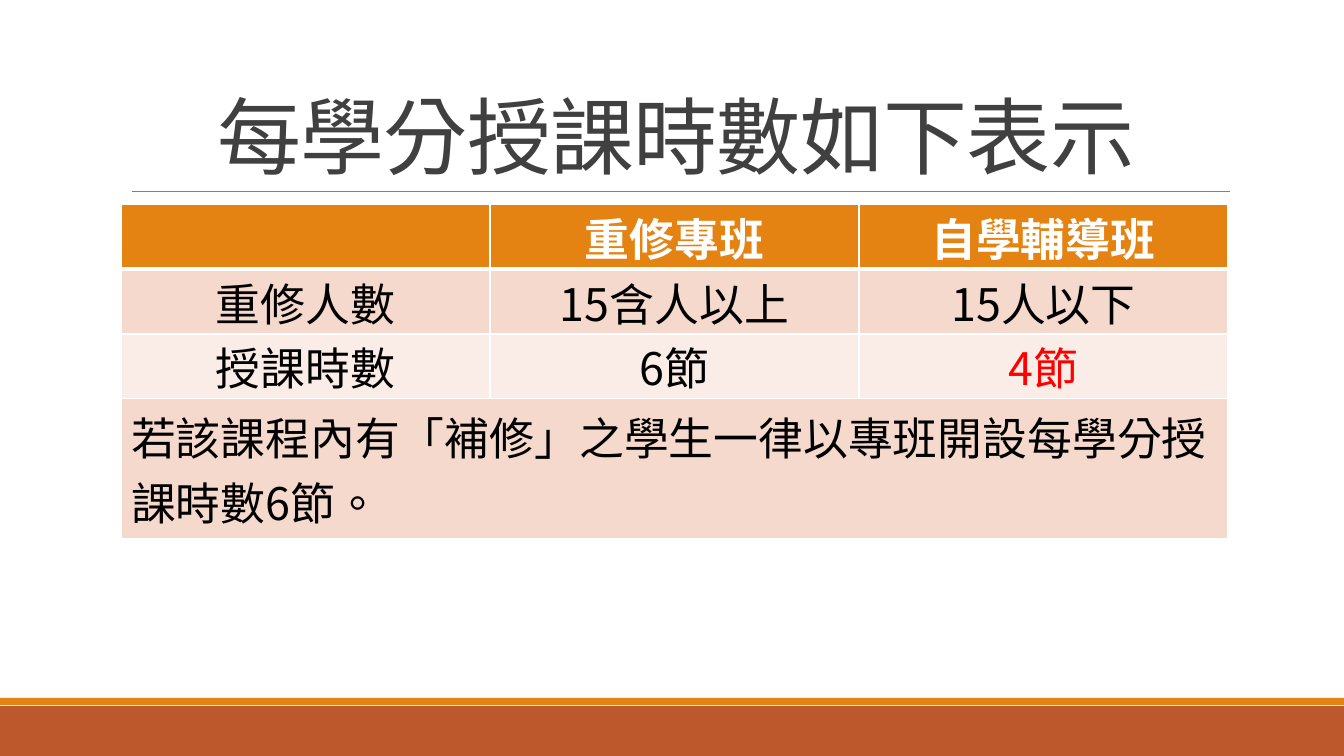
import dataclasses

import lxml.etree
import pptx
import pptx.dml.color
import pptx.enum.lang
import pptx.enum.shapes
import pptx.enum.text
import pptx.oxml.ns
import pptx.util

ALIGN = pptx.enum.text.PP_ALIGN
ANCHOR = pptx.enum.text.MSO_ANCHOR


@dataclasses.dataclass(frozen=True)
class Theme:
    latin: str = "Calibri"
    cjk: str = "Noto Sans CJK SC"
    title_size: int = 60
    table_size: int = 32
    title: str = "404040"
    rule: str = "808080"
    footer: str = "BD582C"
    accent: str = "E48312"
    band: str = "F5D9CC"
    pale_band: str = "FAEDE7"
    white: str = "FFFFFF"
    black: str = "000000"
    alert: str = "FF0000"


def px(length):
    return round(length * 914400 / 100.8)


def rgb(color):
    return pptx.dml.color.RGBColor.from_string(color)


def add_child(parent, tag, **attributes):
    return lxml.etree.SubElement(parent, pptx.oxml.ns.qn(tag), attributes)


def write(paragraph, text, *, font, size, color, bold=False, spacing=0):
    run = paragraph.add_run()
    run.text = text
    run.font.name = font
    run.font.size = pptx.util.Pt(size)
    run.font.bold = bold
    run.font.color.rgb = rgb(color)
    run.font.language_id = pptx.enum.lang.MSO_LANGUAGE_ID.TRADITIONAL_CHINESE
    properties = run.font._element
    if spacing:
        properties.set("spc", str(round(spacing * 100)))
    add_child(properties, "a:ea", typeface=Theme.cjk)


class SlideBuilder:
    """Draw themed elements on the current slide, in px."""

    def __init__(self, presentation, theme):
        self.theme = theme
        self.slide = presentation.slides.add_slide(presentation.slide_layouts[6])

    def bar(self, left, top, width, height, color):
        shape = self.slide.shapes.add_shape(
            pptx.enum.shapes.MSO_SHAPE.RECTANGLE, px(left), px(top), px(width), px(height))
        shape.shadow.inherit = False
        shape.fill.solid()
        shape.fill.fore_color.rgb = rgb(color)
        shape.line.fill.background()

    def rule(self, left, top, right):
        connector = self.slide.shapes.add_connector(
            pptx.enum.shapes.MSO_CONNECTOR.STRAIGHT, px(left), px(top), px(right), px(top))
        connector.line.color.rgb = rgb(self.theme.rule)
        connector.line.width = pptx.util.Pt(0.5)
        add_child(connector._element.spPr, "a:effectLst")

    def title(self, text, left, top, width, height):
        frame = self.slide.shapes.add_textbox(px(left), px(top), px(width), px(height)).text_frame
        frame.word_wrap = True
        frame.vertical_anchor = ANCHOR.BOTTOM
        paragraph = frame.paragraphs[0]
        paragraph.alignment = ALIGN.CENTER
        paragraph.line_spacing = 0.85
        write(paragraph, text, font=self.theme.cjk, size=self.theme.title_size,
              color=self.theme.title, spacing=-0.5)

    def borders(self, cell, top, bottom):
        properties = cell._tc.get_or_add_tcPr()
        for side, width in (("L", 1), ("R", 1), ("T", top), ("B", bottom)):
            line = add_child(properties, f"a:ln{side}", w=str(pptx.util.Pt(width)))
            add_child(add_child(line, "a:solidFill"), "a:srgbClr", val=self.theme.white)

    def cell(self, cell, runs, fill, bold=False, centered=True):
        cell.fill.solid()
        cell.fill.fore_color.rgb = rgb(fill)
        paragraph = cell.text_frame.paragraphs[0]
        if centered:
            cell.vertical_anchor = ANCHOR.MIDDLE
            cell.margin_left = cell.margin_right = px(7)
            cell.margin_top = cell.margin_bottom = 0
            paragraph.alignment = ALIGN.CENTER
        for text, font, color in runs:
            write(paragraph, text, font=font, size=self.theme.table_size, color=color, bold=bold)

    def table(self, rows, note, left, top, column_width, heights):
        theme = self.theme
        columns = len(rows[0])
        table = self.slide.shapes.add_table(
            len(heights), columns, px(left), px(top),
            px(column_width * columns), px(sum(heights))).table
        for column in table.columns:
            column.width = px(column_width)
        for index, height in enumerate(heights):
            table.rows[index].height = px(height)
            for cell in table.rows[index].cells:
                self.borders(cell, 3 if index == 1 else 1, 3 if index == 0 else 1)
        fills = (theme.accent, theme.band, theme.pale_band)
        for row_index, (row, fill) in enumerate(zip(rows, fills)):
            for column_index, runs in enumerate(row):
                self.cell(table.cell(row_index, column_index), runs, fill, bold=row_index == 0)
        last = len(heights) - 1
        table.cell(last, 0).merge(table.cell(last, columns - 1))
        self.cell(table.cell(last, 0), note, theme.band, centered=False)


def main():
    presentation = pptx.Presentation()
    presentation.slide_width, presentation.slide_height = px(1344), px(756)
    theme = Theme()
    builder = SlideBuilder(presentation, theme)

    def header(text):
        return [(text, theme.latin, theme.white)]

    def label(text):
        return [(text, theme.latin, theme.black)]

    def count(number, unit, color=theme.black):
        return [(number, theme.cjk, color), (unit, theme.latin, color)]

    builder.bar(0, 706, 1344, 50, theme.footer)
    builder.bar(0, 698, 1344, 7, theme.accent)
    builder.rule(132, 191, 1230)
    builder.title("每學分授課時數如下表示", 121, 31, 1109, 160)
    rows = [
        [[], header("重修專班"), header("自學輔導班")],
        [label("重修人數"), count("15", "含人以上"), count("15", "人以下")],
        [label("授課時數"), count("6", "節"), count("4", "節", theme.alert)],
    ]
    note = [("若該課程內有「補修」之學生一律以專班開設每學分授課時數6節。", theme.cjk, theme.black)]
    builder.table(rows, note, 121, 204, 369, [65, 65, 65, 140])
    presentation.save("out.pptx")


if __name__ == "__main__":
    main()
